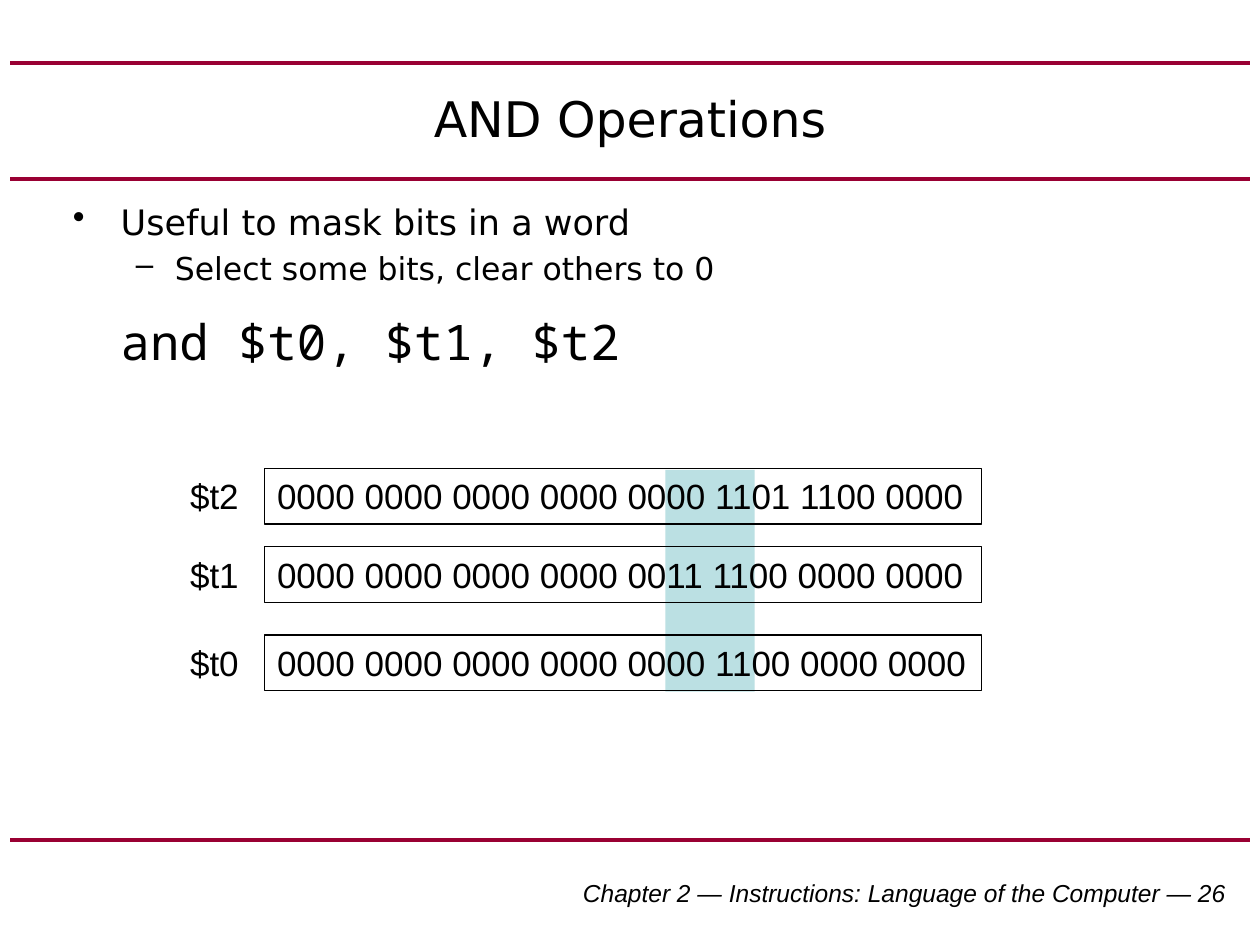
"""Build a slide on masking bits with the AND operation."""
import dataclasses

import lxml.etree
import pptx
import pptx.dml.color
import pptx.enum.shapes
import pptx.enum.text
import pptx.oxml.ns
import pptx.util

Inches = pptx.util.Inches
Pt = pptx.util.Pt
ALIGN = pptx.enum.text.PP_ALIGN
ANCHOR = pptx.enum.text.MSO_ANCHOR
GROW = pptx.enum.text.MSO_AUTO_SIZE.SHAPE_TO_FIT_TEXT
RECTANGLE = pptx.enum.shapes.MSO_SHAPE.RECTANGLE
STRAIGHT = pptx.enum.shapes.MSO_CONNECTOR.STRAIGHT


@dataclasses.dataclass(frozen=True)
class Theme:
    """Colours, line widths and type styles of the slide."""
    ink: str = "000000"
    rule: str = "990033"
    mask: str = "BBE0E3"
    rule_width: float = 2.25
    outline_width: float = 0.75
    title: tuple = ("DejaVu Sans", 28)
    point: tuple = ("DejaVu Sans", 20)
    detail: tuple = ("DejaVu Sans", 18)
    code: tuple = ("Noto Sans Mono", 28)
    bits: tuple = ("Arial", 20)
    footer: tuple = ("Arial", 14)


class SlideBuilder:
    """Draw each kind of element on the current slide in one style."""

    def __init__(self, slide, theme):
        self.slide = slide
        self.theme = theme

    def colour(self, value):
        return pptx.dml.color.RGBColor.from_string(value)

    def apply(self, target, formats):
        for name, value in formats.items():
            setattr(target, name, value)

    def add_text(self, paragraph, text, style, italic=None, **formats):
        family, size = style
        self.apply(paragraph, formats)
        run = paragraph.add_run()
        run.text = text
        self.apply(run.font, {"name": family, "size": Pt(size), "italic": italic})
        run.font.color.rgb = self.colour(self.theme.ink)

    def rule(self, y, left=0.08, right=9.92):
        line = self.slide.shapes.add_connector(
            STRAIGHT, Inches(left), Inches(y), Inches(right), Inches(y))
        line.line.color.rgb = self.colour(self.theme.rule)
        line.line.width = Pt(self.theme.rule_width)
        lxml.etree.SubElement(line._element.spPr, pptx.oxml.ns.qn("a:effectLst"))

    def text_box(self, place, **formats):
        frame = self.slide.shapes.add_textbox(*map(Inches, place)).text_frame
        self.apply(frame, {"word_wrap": True, **formats})
        return frame

    def rectangle(self, place, fill=None, outline=None):
        box = self.slide.shapes.add_shape(RECTANGLE, *map(Inches, place))
        box.shadow.inherit = False
        if fill:
            box.fill.solid()
            box.fill.fore_color.rgb = self.colour(fill)
        else:
            box.fill.background()
        if outline:
            box.line.color.rgb = self.colour(outline)
            box.line.width = Pt(self.theme.outline_width)
        else:
            box.line.fill.background()
        return box.text_frame

    def bullets(self, place, items):
        frame = self.text_box(place)
        for index, (text, mark, margin, hanging, style, formats) in enumerate(items):
            paragraph = frame.add_paragraph() if index else frame.paragraphs[0]
            properties = paragraph._p.get_or_add_pPr()
            properties.set("marL", str(Inches(margin)))
            properties.set("indent", str(-Inches(hanging)))
            if mark:
                bullet = lxml.etree.SubElement(properties, pptx.oxml.ns.qn("a:buChar"))
                bullet.set("char", mark)
            self.add_text(paragraph, text, style, **formats)

    def register(self, name, bits, top):
        grow = {"word_wrap": False, "auto_size": GROW, "vertical_anchor": ANCHOR.TOP}
        value = self.rectangle((2.1, top, 5.69, 0.44), outline=self.theme.ink)
        self.apply(value, grow)
        label = self.text_box((1.41, top, 0.59, 0.43), **grow)
        for frame, text in ((value, bits), (label, name)):
            self.add_text(frame.paragraphs[0], text, self.theme.bits,
                          alignment=ALIGN.LEFT)


def main():
    deck = pptx.Presentation()
    deck.slide_width, deck.slide_height = Inches(10), Inches(7.5)
    theme = Theme()
    builder = SlideBuilder(deck.slides.add_slide(deck.slide_layouts[6]), theme)

    for y in (6.67, 1.42, 0.5):
        builder.rule(y)

    footer = builder.text_box((3.75, 6.92, 6.08, 0.33))
    builder.add_text(footer.paragraphs[0],
                     "Chapter 2 — Instructions: Language of the Computer — 26",
                     theme.footer, italic=True, alignment=ALIGN.RIGHT)

    builder.rectangle((5.28, 3.73, 0.71, 1.76), fill=theme.mask)

    title = builder.text_box((0.5, 0.5, 9, 0.87), vertical_anchor=ANCHOR.MIDDLE)
    builder.add_text(title.paragraphs[0], "AND Operations", theme.title,
                     alignment=ALIGN.CENTER)

    builder.bullets((0.48, 1.54, 9.05, 1.63), (
        ("Useful to mask bits in a word", "•", 0.38, 0.38, theme.point, {}),
        ("Select some bits, clear others to 0", "–", 0.81, 0.31, theme.detail,
         {"space_before": Pt(4)}),
        ("and $t0, $t1, $t2", None, 0.38, 0, theme.code,
         {"space_before": Pt(14), "space_after": Pt(8)}),
    ))

    for name, bits, top in (
        ("$t2", "0000 0000 0000 0000 0000 1101 1100 0000", 3.72),
        ("$t1", "0000 0000 0000 0000 0011 1100 0000 0000", 4.34),
        ("$t0", "0000 0000 0000 0000 0000 1100 0000 0000", 5.04),
    ):
        builder.register(name, bits, top)

    deck.save("out.pptx")


if __name__ == "__main__":
    main()
